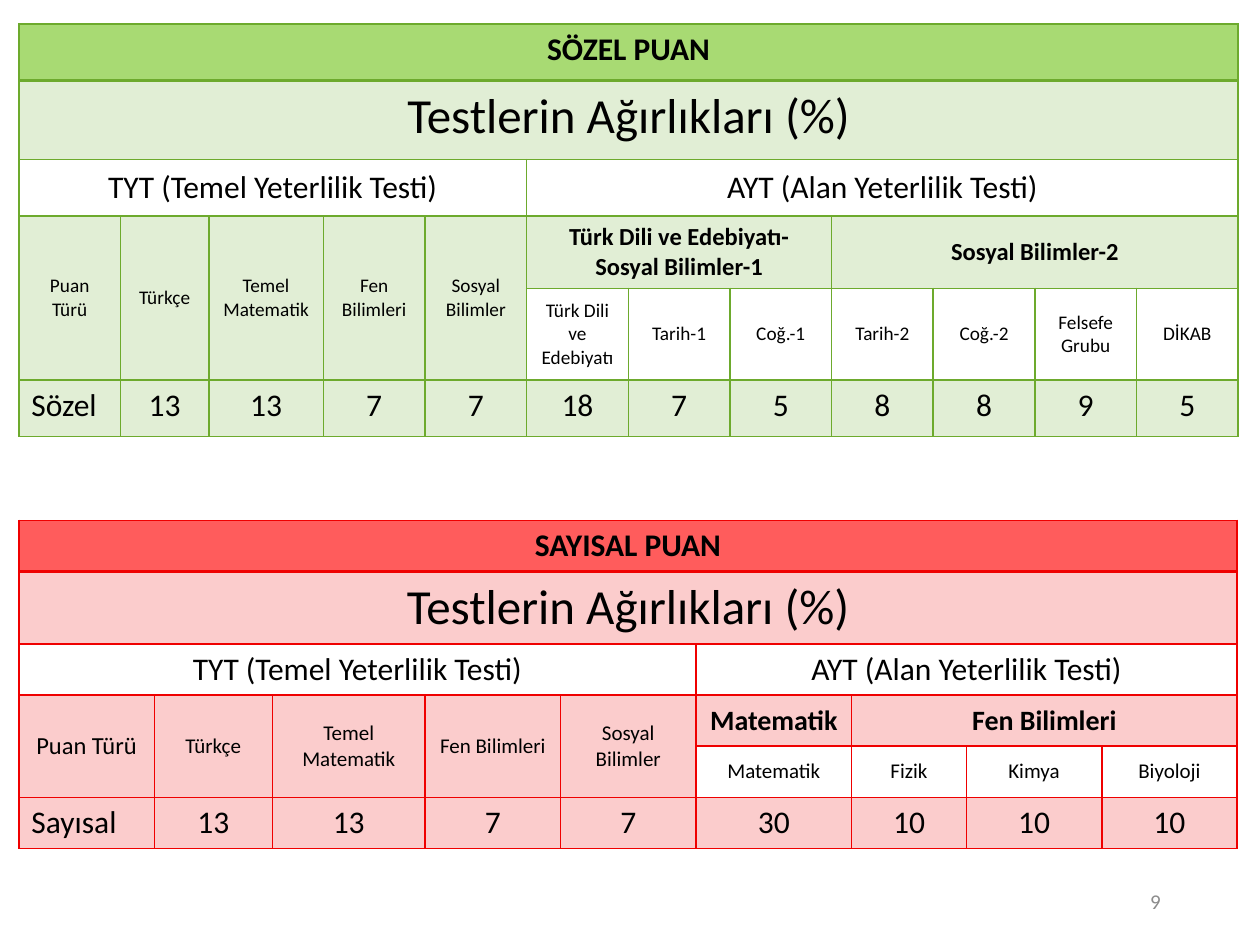
"""Build a slide with two tables of exam score weights."""
import pptx
import pptx.dml.color
import pptx.enum.text
import pptx.oxml
import pptx.oxml.ns
import pptx.util

Cm = pptx.util.Cm
Pt = pptx.util.Pt
ALIGN = pptx.enum.text.PP_ALIGN
ANCHOR = pptx.enum.text.MSO_ANCHOR

VERBAL = {
    "title": "SÖZEL PUAN", "top": 0.48, "hue": "6DAA2D", "head": "A8DA73",
    "cols": [2.05, 1.78, 2.31] + [2.05] * 9,
    "rows": [1.14, 1.6, 1.14, 1.42, 1.85, 1.14],
    "sizes": {"type": 11, "test": 11, "group": 14},
    "groups": [("Türk Dili ve Edebiyatı- Sosyal Bilimler-1", 3), ("Sosyal Bilimler-2", 4)],
    "tests": ["Türk Dili ve Edebiyatı", "Tarih-1", "Coğ.-1", "Tarih-2", "Coğ.-2",
              "Felsefe Grubu", "DİKAB"],
    "marks": ["Sözel", 13, 13, 7, 7, 18, 7, 5, 8, 8, 9, 5],
}
NUMERIC = {
    "title": "SAYISAL PUAN", "top": 10.49, "hue": "EF0000", "head": "FF5C5C",
    "cols": [2.73, 2.38, 3.08, 2.73, 2.73, 3.14, 2.31, 2.73, 2.73],
    "rows": [1.03] * 6,
    "sizes": {"type": 14, "test": 12, "group": 16},
    "groups": [("Matematik", 1), ("Fen Bilimleri", 3)],
    "tests": ["Matematik", "Fizik", "Kimya", "Biyoloji"],
    "marks": ["Sayısal", 13, 13, 7, 7, 30, 10, 10, 10],
}
BASIC = ["Puan Türü", "Türkçe", "Temel Matematik", "Fen Bilimleri", "Sosyal Bilimler"]


def rgb(code):
    """Turn a hex string into a colour."""
    return pptx.dml.color.RGBColor.from_string(code)


def write(frame, text, size, bold=False, hue="000000", align=ALIGN.CENTER):
    """Put one formatted run of text into a text frame."""
    para = frame.paragraphs[0]
    para.alignment = align
    run = para.add_run()
    run.text = str(text)
    form = {"name": "Calibri", "size": Pt(size), "bold": bold}
    for key, val in form.items():
        setattr(run.font, key, val)
    run.font.color.rgb = rgb(hue)


def edge(cell, hue, wide):
    """Draw the four borders of a cell, with widths given by side."""
    props = cell._tc.get_or_add_tcPr()
    for side in "LRTB":
        props.append(pptx.oxml.parse_xml(
            f'<a:ln{side} {pptx.oxml.ns.nsdecls("a")} w="{Pt(wide.get(side, 1))}">'
            f'<a:solidFill><a:srgbClr val="{hue}"/></a:solidFill></a:ln{side}>'))


def paint(cell, hue, alpha=None):
    """Fill a cell, see-through when an alpha percentage is given."""
    cell.fill.solid()
    cell.fill.fore_color.rgb = rgb(hue)
    if alpha:
        code = cell._tc.tcPr.find(pptx.oxml.ns.qn("a:solidFill"))[0]
        code.append(pptx.oxml.parse_xml(
            f'<a:alpha {pptx.oxml.ns.nsdecls("a")} val="{alpha * 1000}"/>'))


def put(grid, row, col, text, size, wide=1, tall=1, mid=True, **form):
    """Write a cell, merged over the given columns and rows."""
    cell = grid.cell(row, col)
    if wide * tall > 1:
        cell.merge(grid.cell(row + tall - 1, col + wide - 1))
    cell.vertical_anchor = ANCHOR.MIDDLE if mid else ANCHOR.TOP
    write(cell.text_frame, text, size, **form)


def frame(slide, data):
    """Add an empty table with its borders and fills."""
    cols, rows = data["cols"], data["rows"]
    grid = slide.shapes.add_table(len(rows), len(cols), Cm(0.38), Cm(data["top"]),
                                  Cm(sum(cols)), Cm(sum(rows))).table
    grid.first_row = grid.horz_banding = False
    for col, wide in zip(grid.columns, cols):
        col.width = Cm(wide)
    for row, tall in zip(grid.rows, rows):
        row.height = Cm(tall)
    base = len(BASIC)
    for row in range(len(rows)):
        for col in range(len(cols)):
            cell = grid.cell(row, col)
            edge(cell, data["hue"], {0: {"B": 2}, 1: {"T": 2}}.get(row, {}))
            if row == 0:
                paint(cell, data["head"])
            elif row == 2 or (row == 4 and col >= base):
                cell.fill.background()
            else:
                paint(cell, data["hue"], 20)
    return grid


def weights(slide, data):
    """Add one table of test weights."""
    grid = frame(slide, data)
    size, full, base = data["sizes"], len(data["cols"]), len(BASIC)
    put(grid, 0, 0, data["title"], 18, wide=full, mid=False, bold=True)
    put(grid, 1, 0, "Testlerin Ağırlıkları (%)", 28, wide=full, mid=False)
    put(grid, 2, 0, "TYT (Temel Yeterlilik Testi)", 18, wide=base)
    put(grid, 2, base, "AYT (Alan Yeterlilik Testi)", 18, wide=full - base)
    for col, name in enumerate(BASIC):
        put(grid, 3, col, name, size["test" if col else "type"], tall=2)
    col = base
    for name, wide in data["groups"]:
        put(grid, 3, col, name, size["group"], wide=wide, bold=True)
        col += wide
    for col, name in enumerate(data["tests"], base):
        put(grid, 4, col, name, size["test"])
    for col, mark in enumerate(data["marks"]):
        put(grid, 5, col, mark, 18, mid=False,
            align=ALIGN.CENTER if col else ALIGN.LEFT)


def number(slide, text):
    """Add the page number."""
    box = slide.shapes.add_textbox(Cm(17.93), Cm(17.65), Cm(5.72), Cm(1.02)).text_frame
    for key, val in {"word_wrap": True, "vertical_anchor": ANCHOR.MIDDLE}.items():
        setattr(box, key, val)
    write(box, text, 12, hue="8C8C8C", align=ALIGN.RIGHT)


def main():
    """Build and save the slide."""
    deck = pptx.Presentation()
    deck.slide_width, deck.slide_height = Cm(25.4), Cm(19.05)
    slide = deck.slides.add_slide(deck.slide_layouts[6])
    for data in (VERBAL, NUMERIC):
        weights(slide, data)
    number(slide, "9")
    deck.save("out.pptx")


if __name__ == "__main__":
    main()
